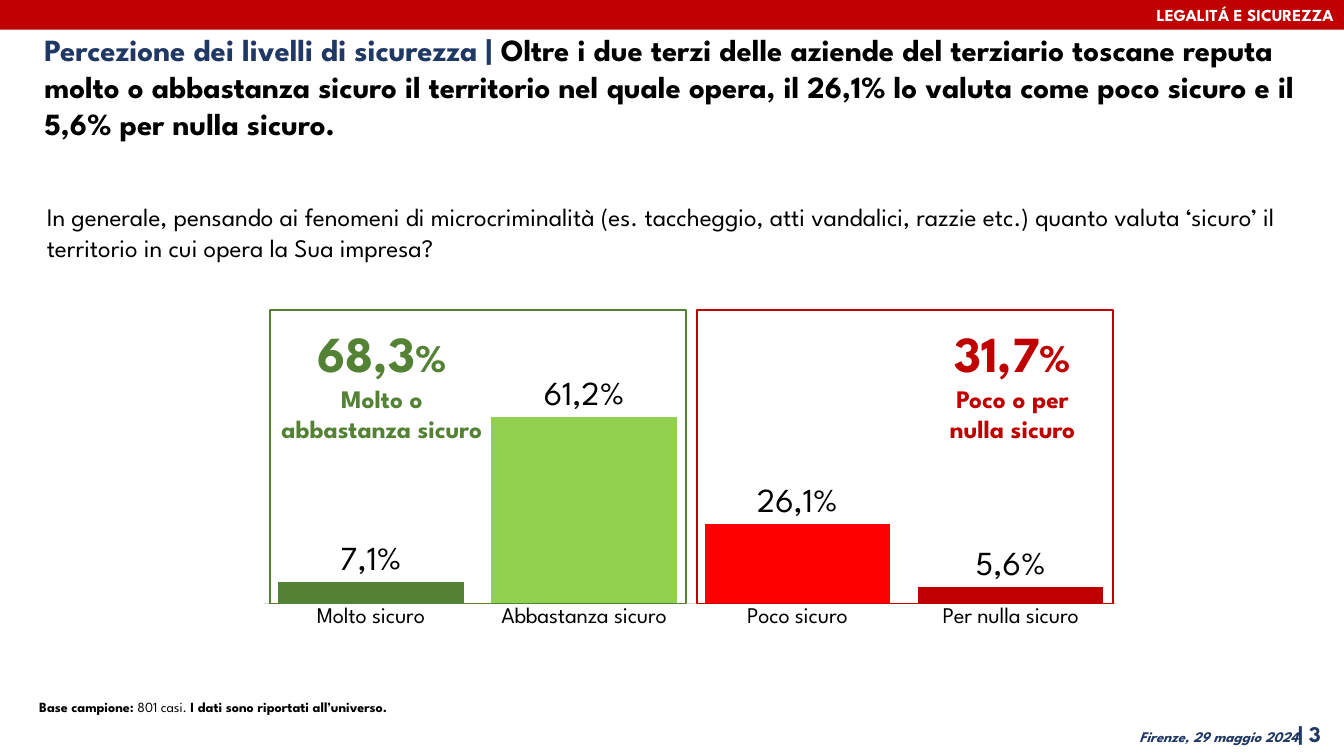
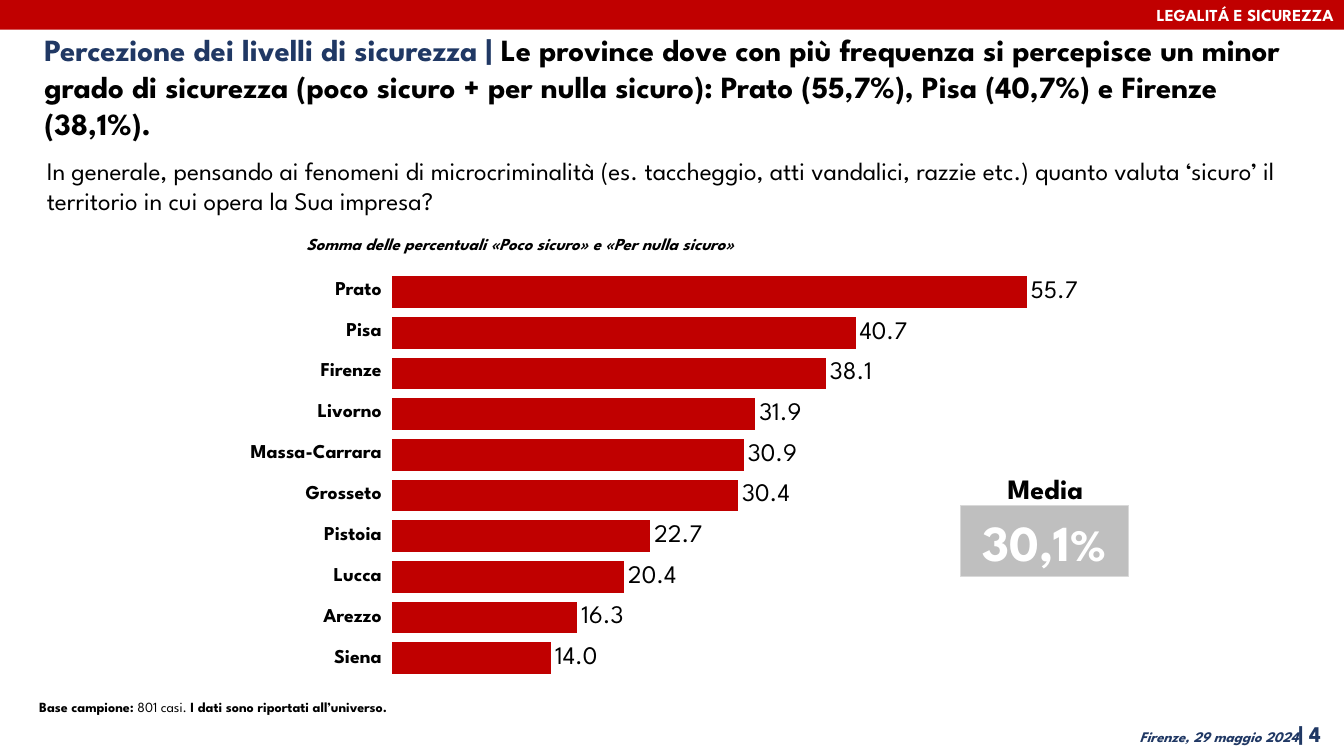
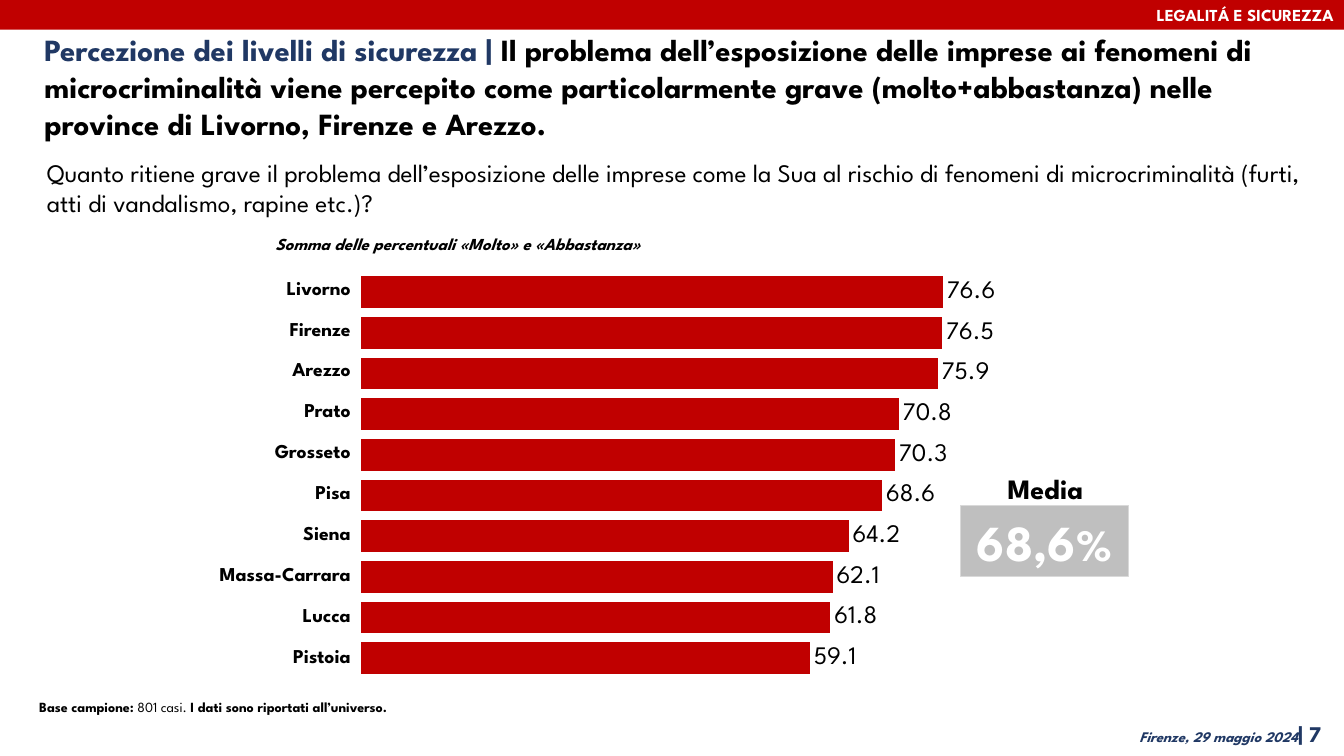
"""Build three slides on how safe Tuscan businesses feel."""
from dataclasses import dataclass
from typing import NamedTuple

from lxml.etree import SubElement
from pptx import Presentation
from pptx.chart.chart import Chart
from pptx.chart.data import CategoryChartData
from pptx.dml.color import RGBColor
from pptx.enum.chart import XL_CHART_TYPE as ChartType
from pptx.enum.chart import XL_LABEL_POSITION as LabelPosition
from pptx.enum.chart import XL_TICK_MARK as TickMark
from pptx.enum.shapes import MSO_SHAPE as Shape
from pptx.enum.text import MSO_ANCHOR as Anchor
from pptx.enum.text import MSO_AUTO_SIZE as AutoSize
from pptx.enum.text import PP_ALIGN as Align
from pptx.oxml.ns import qn
from pptx.presentation import Presentation as Deck
from pptx.shapes.autoshape import Shape as AutoShape
from pptx.slide import Slide
from pptx.text.text import Font, TextFrame
from pptx.util import Cm, Pt

BLACK = RGBColor(0x00, 0x00, 0x00)
WHITE = RGBColor(0xFF, 0xFF, 0xFF)
NAVY = RGBColor(0x20, 0x38, 0x64)
DARK_RED = RGBColor(0xC0, 0x00, 0x00)
RED = RGBColor(0xFF, 0x00, 0x00)
DARK_GREEN = RGBColor(0x54, 0x82, 0x35)
LIGHT_GREEN = RGBColor(0x92, 0xD0, 0x50)
GREY = RGBColor(0xBF, 0xBF, 0xBF)
PALE_GREY = RGBColor(0xD9, 0xD9, 0xD9)

TEXT_FONT = "League Spartan"
CHART_FONT = "Calibri"
SLIDE_WIDTH, SLIDE_HEIGHT = 33.87, 19.05
TITLE_ONLY = 5
NAME_TOP, NAME_HEIGHT, NAME_PITCH = 6.9, 0.81, 1.03
SAFETY_QUESTION = (
    "In generale, pensando ai fenomeni di microcriminalità (es. taccheggio, "
    "atti vandalici, razzie etc.) quanto valuta ‘sicuro’ il territorio in cui "
    "opera la Sua impresa?"
)


class Box(NamedTuple):
    left: float
    top: float
    width: float
    height: float

    def lengths(self) -> list[Cm]:
        return [Cm(value) for value in self]


@dataclass(frozen=True)
class Span:
    text: str
    size: float
    color: RGBColor = BLACK
    bold: bool = False
    italic: bool = False


@dataclass(frozen=True)
class Bar:
    category: str
    value: float
    color: RGBColor
    label: str


@dataclass(frozen=True)
class Group:
    share: str
    caption: str
    color: RGBColor
    frame_left: float
    callout: Box


@dataclass(frozen=True)
class Ranking:
    number: int
    headline: str
    question: str
    question_top: float
    note: str
    chart_left: float
    maximum: float
    average: str
    provinces: dict[str, float]


BARS = [
    Bar("Molto sicuro", 7.1, DARK_GREEN, "7,1%"),
    Bar("Abbastanza sicuro", 61.2, LIGHT_GREEN, "61,2%"),
    Bar("Poco sicuro", 26.1, RED, "26,1%"),
    Bar("Per nulla sicuro", 5.6, DARK_RED, "5,6%"),
]
GROUPS = [
    Group("68,3", "Molto o abbastanza sicuro", DARK_GREEN, 6.8, Box(6.74, 8, 5.77, 4.11)),
    Group("31,7", "Poco o per nulla sicuro", DARK_RED, 17.56, Box(23.17, 8, 4.7, 3.33)),
]
RANKINGS = [
    Ranking(
        4,
        "Le province dove con più frequenza si percepisce un minor grado di sicurezza "
        "(poco sicuro + per nulla sicuro): Prato (55,7%), Pisa (40,7%) e Firenze (38,1%).",
        SAFETY_QUESTION,
        3.78,
        "Somma delle percentuali «Poco sicuro» e «Per nulla sicuro»",
        8.69,
        60,
        "30,1",
        {
            "Prato": 55.7, "Pisa": 40.7, "Firenze": 38.1, "Livorno": 31.9,
            "Massa-Carrara": 30.9, "Grosseto": 30.4, "Pistoia": 22.7,
            "Lucca": 20.4, "Arezzo": 16.3, "Siena": 14.0,
        },
    ),
    Ranking(
        7,
        "Il problema dell’esposizione delle imprese ai fenomeni di microcriminalità viene "
        "percepito come particolarmente grave (molto+abbastanza) nelle province di "
        "Livorno, Firenze e Arezzo.",
        "Quanto ritiene grave il problema dell’esposizione delle imprese come la Sua al "
        "rischio di fenomeni di microcriminalità (furti, atti di vandalismo, rapine etc.)?",
        3.84,
        "Somma delle percentuali «Molto» e «Abbastanza»",
        7.91,
        90,
        "68,6",
        {
            "Livorno": 76.6, "Firenze": 76.5, "Arezzo": 75.9, "Prato": 70.8,
            "Grosseto": 70.3, "Pisa": 68.6, "Siena": 64.2,
            "Massa-Carrara": 62.1, "Lucca": 61.8, "Pistoia": 59.1,
        },
    ),
]


def style_font(font: Font, span: Span, fields: set[str]) -> None:
    if "size" in fields:
        font.size = Pt(span.size)
    if "color" in fields:
        font.color.rgb = span.color
    if "bold" in fields:
        font.bold = span.bold
    if "italic" in fields:
        font.italic = span.italic


def write(frame: TextFrame, lines: list[list[Span]], align: Align = Align.LEFT) -> None:
    fields = {"size", "color", "bold", "italic"}
    frame.word_wrap = True
    for index, spans in enumerate(lines):
        para = frame.add_paragraph() if index else frame.paragraphs[0]
        para.alignment = align
        shared = {name for name in fields if len({getattr(span, name) for span in spans}) == 1}
        para.font.name = TEXT_FONT
        style_font(para.font, spans[0], shared)
        for span in spans:
            run = para.add_run()
            run.text = span.text
            style_font(run.font, span, fields - shared)


def add_text(page: Slide, box: Box, lines: list[list[Span]], align: Align = Align.LEFT) -> None:
    write(page.shapes.add_textbox(*box.lengths()).text_frame, lines, align)


def add_rectangle(
    page: Slide,
    box: Box,
    fill: RGBColor | None = None,
    line: RGBColor | None = None,
    line_width: float = 0.75,
) -> AutoShape:
    shape = page.shapes.add_shape(Shape.RECTANGLE, *box.lengths())
    shape.shadow.inherit = False
    if fill is None:
        shape.fill.background()
    else:
        shape.fill.solid()
        shape.fill.fore_color.rgb = fill
    if line is None:
        shape.line.fill.background()
    else:
        shape.line.color.rgb = line
        shape.line.width = Pt(line_width)
    return shape


def add_page(deck: Deck, number: int, headline: str, question: str, question_top: float) -> Slide:
    page = deck.slides.add_slide(deck.slide_layouts[TITLE_ONLY])
    title = page.shapes.title
    title.left, title.top, title.width, title.height = Box(0.94, 0.68, 32.21, 3.02).lengths()
    frame = title.text_frame
    frame.auto_size = AutoSize.NONE
    frame.vertical_anchor = Anchor.TOP
    frame.margin_left = frame.margin_right = Cm(0.18)
    frame.margin_top = frame.margin_bottom = Cm(0.1)
    write(frame, [[
        Span("Percezione dei livelli di sicurezza | ", 22, NAVY, bold=True),
        Span(headline, 22, bold=True),
    ]])
    band = add_rectangle(page, Box(0, 0, SLIDE_WIDTH, 0.75), DARK_RED)
    write(band.text_frame, [[Span("LEGALITÁ E SICUREZZA", 12, WHITE, bold=True)]], Align.RIGHT)
    add_text(page, Box(0.93, question_top, 32.31, 1.8), [[Span(question, 18)]])
    add_text(page, Box(0.74, 17.48, 27.76, 0.69), [[
        Span("Base campione: ", 10, bold=True),
        Span("801 casi. ", 10),
        Span("I dati sono riportati all’universo.", 10, bold=True),
    ]])
    add_text(page, Box(15.94, 18.02, 17.6, 0.94), [[
        Span("Firenze, 29 maggio 2024", 10.5, NAVY, bold=True, italic=True),
        Span(f"| {number}", 16, NAVY, bold=True),
    ]], Align.RIGHT)
    return page


def place_plot(chart: Chart, box: Box, plot: Box) -> None:
    area = chart.element.chart.plotArea
    for old in area.findall(qn("c:layout")):
        area.remove(old)
    holder = SubElement(area, qn("c:layout"))
    area.insert(0, holder)
    manual = SubElement(holder, qn("c:manualLayout"))
    settings = {
        "layoutTarget": "inner",
        "xMode": "edge",
        "yMode": "edge",
        "x": plot.left / box.width,
        "y": plot.top / box.height,
        "w": plot.width / box.width,
        "h": plot.height / box.height,
    }
    for name, value in settings.items():
        SubElement(manual, qn(f"c:{name}")).set("val", str(value))


def add_bar_chart(
    page: Slide,
    kind: ChartType,
    box: Box,
    plot_box: Box,
    categories: list[str],
    values: list[float],
    maximum: float,
    gap: int,
    label_size: float,
) -> Chart:
    data = CategoryChartData(number_format="0.0")
    data.categories = categories
    data.add_series("Series 1", values)
    chart = page.shapes.add_chart(kind, *box.lengths(), data).chart
    chart.has_title = chart.has_legend = False
    chart.font.name = CHART_FONT
    chart.font.size = Pt(10)
    chart.font.color.rgb = BLACK
    axis = chart.value_axis
    axis.minimum_scale, axis.maximum_scale = 0, maximum
    axis.has_major_gridlines = axis.visible = False
    plot = chart.plots[0]
    plot.vary_by_categories = False
    plot.gap_width = gap
    fill = plot.series[0].format.fill
    fill.solid()
    fill.fore_color.rgb = DARK_RED
    labels = plot.series[0].data_labels
    labels.show_value = True
    labels.position = LabelPosition.OUTSIDE_END
    labels.number_format = "0.0"
    labels.number_format_is_linked = False
    labels.font.name = TEXT_FONT
    labels.font.size = Pt(label_size)
    labels.font.color.rgb = BLACK
    place_plot(chart, box, plot_box)
    return chart


def add_safety_chart(page: Slide) -> None:
    chart = add_bar_chart(
        page, ChartType.COLUMN_CLUSTERED,
        Box(5.97, 7.43, 22.2, 10.03), Box(0.69, 2.4, 21.51, 5.39),
        [bar.category for bar in BARS], [bar.value for bar in BARS], 70, 15, 24,
    )
    chart.plots[0].overlap = 58
    axis = chart.category_axis
    axis.major_tick_mark = TickMark.NONE
    axis.format.line.color.rgb = PALE_GREY
    axis.format.line.width = Pt(0.75)
    axis.tick_labels.font.name = TEXT_FONT
    axis.tick_labels.font.size = Pt(16)
    axis.tick_labels.font.color.rgb = BLACK
    for index, bar in enumerate(BARS):
        point = chart.plots[0].series[0].points[index]
        point.format.fill.solid()
        point.format.fill.fore_color.rgb = bar.color
        run = point.data_label.text_frame.paragraphs[0].add_run()
        run.text = bar.label
        run.font.name = TEXT_FONT
        run.font.size = Pt(24)
        run.font.color.rgb = BLACK
        point.data_label.position = LabelPosition.OUTSIDE_END


def add_province_name(page: Slide, box: Box, name: str) -> None:
    table = page.shapes.add_table(1, 1, *box.lengths()).table
    table.first_row = table.horz_banding = False
    cell = table.cell(0, 0)
    cell.fill.background()
    cell.vertical_anchor = Anchor.MIDDLE
    cell.margin_left = cell.margin_right = cell.margin_top = Cm(0.03)
    cell.margin_bottom = 0
    write(cell.text_frame, [[Span(name, 14, bold=True)]], Align.RIGHT)


def add_safety_page(deck: Deck) -> None:
    page = add_page(
        deck, 3,
        "Oltre i due terzi delle aziende del terziario toscane reputa molto o abbastanza "
        "sicuro il territorio nel quale opera, il 26,1% lo valuta come poco sicuro e il "
        "5,6% per nulla sicuro.",
        SAFETY_QUESTION, 4.96,
    )
    add_safety_chart(page)
    for group in GROUPS:
        add_text(page, group.callout, [
            [Span(group.share, 36, group.color, bold=True), Span("%", 28, group.color, bold=True)],
            [Span(group.caption, 18, group.color, bold=True)],
        ], Align.CENTER)
        add_rectangle(page, Box(group.frame_left, 7.82, 10.49, 7.39), line=group.color, line_width=1.25)


def add_ranking_page(deck: Deck, ranking: Ranking) -> None:
    page = add_page(deck, ranking.number, ranking.headline, ranking.question, ranking.question_top)
    left = ranking.chart_left
    names = list(ranking.provinces)
    chart = add_bar_chart(
        page, ChartType.BAR_CLUSTERED,
        Box(left, 6.19, 18.72, 11.56), Box(1.18, 0.66, 17.24, 10.25),
        [str(rank) for rank in range(1, len(names) + 1)], list(ranking.provinces.values()),
        ranking.maximum, 28, 18,
    )
    chart.category_axis.reverse_order = True
    chart.category_axis.visible = False
    for index, name in enumerate(names):
        top = NAME_TOP + index * NAME_PITCH
        add_province_name(page, Box(left - 7.17, top, 8.13, NAME_HEIGHT), name)
    add_text(page, Box(left - 1.22, 5.77, 16.33, 0.76), [[Span(ranking.note, 12, bold=True, italic=True)]])
    average = add_rectangle(page, Box(24.21, 12.73, 4.22, 1.8), GREY, PALE_GREY)
    write(average.text_frame, [[
        Span(ranking.average, 36, WHITE, bold=True), Span("%", 32, WHITE, bold=True),
    ]], Align.CENTER)
    add_text(page, Box(24.59, 11.76, 3.51, 1.12), [[Span("Media", 20, bold=True)]], Align.CENTER)


def main() -> None:
    deck = Presentation()
    deck.slide_width, deck.slide_height = Cm(SLIDE_WIDTH), Cm(SLIDE_HEIGHT)
    add_safety_page(deck)
    for ranking in RANKINGS:
        add_ranking_page(deck, ranking)
    deck.save("out.pptx")


if __name__ == "__main__":
    main()
